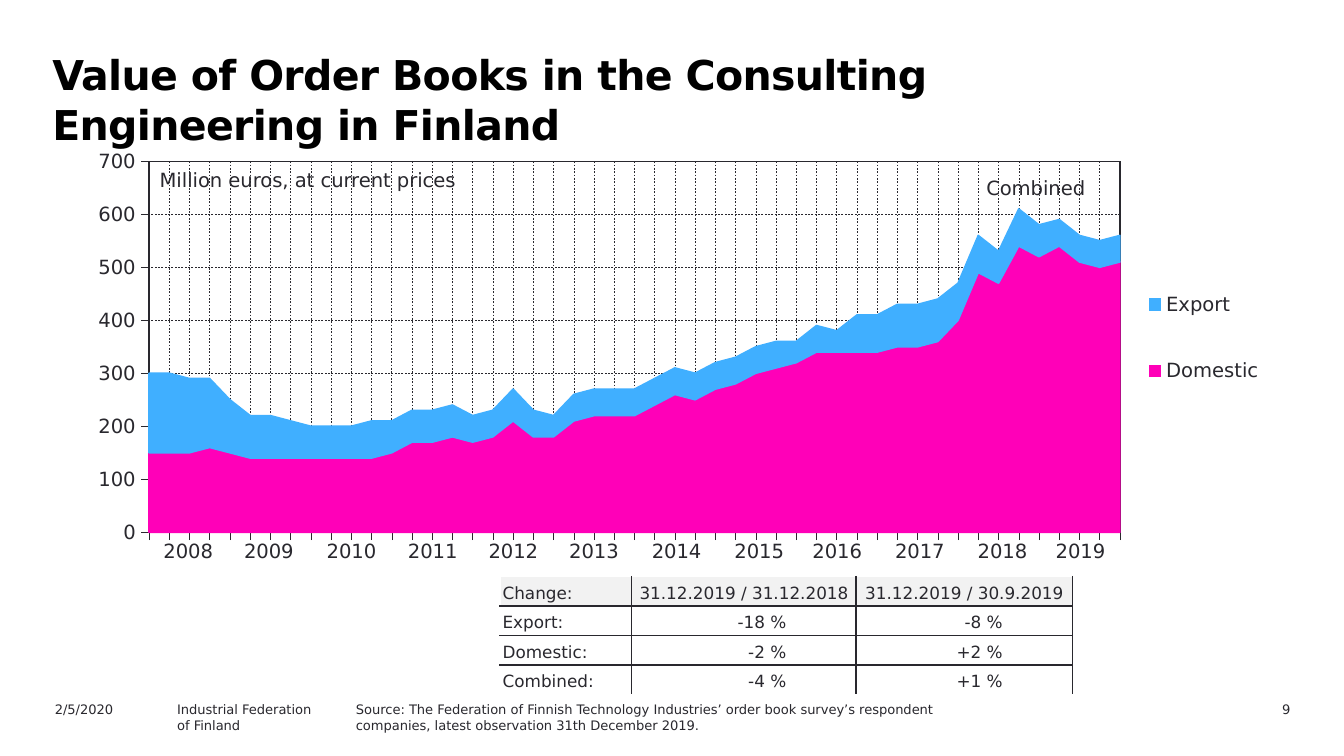
"""Build the slide on order books in Finnish consulting engineering."""
from dataclasses import dataclass

from lxml import etree
from pptx import Presentation
from pptx.chart.data import CategoryChartData
from pptx.dml.color import RGBColor
from pptx.enum.chart import XL_CHART_TYPE, XL_LEGEND_POSITION, XL_TICK_LABEL_POSITION, XL_TICK_MARK
from pptx.enum.dml import MSO_LINE
from pptx.enum.text import MSO_ANCHOR, PP_ALIGN
from pptx.oxml import parse_xml
from pptx.oxml.ns import nsdecls, qn
from pptx.util import Inches, Pt

AREA = XL_CHART_TYPE.AREA_STACKED
SIDE = XL_LEGEND_POSITION.RIGHT
BARE = XL_TICK_LABEL_POSITION.NONE
OUT = XL_TICK_MARK.OUTSIDE
DASH = MSO_LINE.DASH
LEFT, MID, RIGHT = PP_ALIGN.LEFT, PP_ALIGN.CENTER, PP_ALIGN.RIGHT
TOP, BASE = MSO_ANCHOR.TOP, MSO_ANCHOR.BOTTOM


@dataclass(frozen=True)
class Theme:
    face: str = "DejaVu Sans"
    ink: str = "29282E"
    black: str = "000000"
    white: str = "FFFFFF"
    head: str = "F2F2F2"
    pink: str = "FF00B8"
    blue: str = "40AFFF"
    title: float = 22
    label: float = 10.5
    cell: float = 9
    small: float = 7


theme = Theme()


def write(frame, lines, size, align=LEFT, color=theme.ink, bold=False):
    frame.word_wrap = True
    for i, line in enumerate(lines):
        par = frame.add_paragraph() if i else frame.paragraphs[0]
        par.alignment = align
        run = par.add_run()
        run.text = line
        run.font.name = theme.face
        run.font.size = Pt(size)
        run.font.bold = bold
        run.font.color.rgb = RGBColor.from_string(color)
    return par


def edge(cell, colors):
    props = cell._tc.get_or_add_tcPr()
    for side, color in zip("LRTB", colors):
        line = etree.SubElement(props, qn(f"a:ln{side}"), w=str(Pt(1)))
        if color:
            fill = etree.SubElement(line, qn("a:solidFill"))
            etree.SubElement(fill, qn("a:srgbClr"), val=color)
        else:
            etree.SubElement(line, qn("a:noFill"))


deck = Presentation()
deck.slide_width = Inches(10)
deck.slide_height = deck.slide_width * 9 // 16
slide = deck.slides.add_slide(deck.slide_layouts[6])
shapes = slide.shapes

box = shapes.add_textbox(Inches(0.28), Inches(0.31), Inches(8.74), Inches(0.77))
box.text_frame.margin_left = Inches(0.11)
par = write(box.text_frame, ["Value of Order Books in the Consulting Engineering in Finland"],
            theme.title, color=theme.black, bold=True)
par.line_spacing = Pt(27)
par.runs[0].font._element.set("spc", "-34")

home = [150, 150, 150, 160, 150, 140, 140, 140, 140, 140, 140, 140, 150, 170, 170, 180, 170,
        180, 210, 180, 180, 210, 220, 220, 220, 240, 260, 250, 270, 280, 300, 310, 320, 340,
        340, 340, 340, 350, 350, 360, 400, 490, 470, 540, 520, 540, 510, 500, 510]
abroad = [150, 150, 140, 130, 100, 80, 80, 70, 60, 60, 60, 70, 60, 60, 60, 60, 50, 50, 60, 50,
          40, 50, 50, 50, 50, 50, 50, 50, 50, 50, 50, 50, 40, 50, 40, 70, 70, 80, 80, 80, 70,
          70, 60, 70, 60, 50, 50, 50, 50]
data = CategoryChartData(number_format="#,##0")
data.categories = [str(n) for n in range(1, 47)]
data.add_series("Domestic", home)
data.add_series("Export", abroad)
chart = shapes.add_chart(AREA, Inches(0.42), Inches(1.11), Inches(9.18), Inches(3.12), data).chart
chart.has_title = False
chart.font.name = theme.face
chart.font.size = Pt(theme.label)
chart.font.color.rgb = RGBColor.from_string(theme.ink)
chart.plots[0].vary_by_categories = False
for series, color in zip(chart.plots[0].series, (theme.pink, theme.blue)):
    series.format.fill.solid()
    series.format.fill.fore_color.rgb = RGBColor.from_string(color)
    series.format.line.color.rgb = RGBColor.from_string(color)
    series.format.line.width = Pt(0.88)

for axis in (chart.category_axis, chart.value_axis):
    axis.has_major_gridlines = True
    axis.major_tick_mark = OUT
    grid = axis.major_gridlines.format.line
    for line, width in ((axis.format.line, 0.22), (grid, 0.25)):
        line.color.rgb = RGBColor.from_string(theme.ink)
        line.width = Pt(width)
    grid.dash_style = DASH
chart.category_axis.tick_label_position = BARE
chart.value_axis.minimum_scale = 0
chart.value_axis.maximum_scale = 700
chart.value_axis.major_unit = 100
chart.value_axis.tick_labels.number_format = "#,##0"
chart.value_axis.tick_labels.number_format_is_linked = False

chart.has_legend = True
chart.legend.position = SIDE
chart.legend.include_in_layout = False
plot = chart._chartSpace.chart.plotArea
legend = chart.legend._element
for host, spot, inner, area in ((plot, 0, True, (0.075, 0.029, 0.787, 0.885)),
                                (legend, 1, False, (0.87, 0.24, 0.12, 0.42))):
    for old in host.findall(qn("c:layout")):
        host.remove(old)
    layout = etree.Element(qn("c:layout"))
    manual = etree.SubElement(layout, qn("c:manualLayout"))
    if inner:
        etree.SubElement(manual, qn("c:layoutTarget"), val="inner")
    for mode in ("xMode", "yMode"):
        etree.SubElement(manual, qn(f"c:{mode}"), val="edge")
    for name, value in zip("xywh", area):
        etree.SubElement(manual, qn(f"c:{name}"), val=str(value))
    host.insert(spot, layout)
plot.append(parse_xml(
    f'<c:spPr {nsdecls("c", "a")}><a:noFill/><a:ln w="{Pt(0.88)}"><a:solidFill>'
    f'<a:srgbClr val="{theme.ink}"/></a:solidFill></a:ln></c:spPr>'))

rows = [("Change:", "31.12.2019 / 31.12.2018", "31.12.2019 / 30.9.2019"),
        ("Export:", "-18 %", "-8 %"),
        ("Domestic:", "-2 %", "+2 %"),
        ("Combined:", "-4 %", "+1 %")]
years = [[str(year) for year in range(2008, 2020)]]
spans = [0.6, 0.6, 0.63, 0.58, 0.62, 0.58, 0.65, 0.58, 0.58, 0.65, 0.58, 0.58]
for kind, left, top, high, grid, wide in (("change", 3.72, 4.29, 0.22, rows, [0.98, 1.67, 1.61]),
                                          ("years", 1.1, 3.97, 0.32, years, spans)):
    table = shapes.add_table(len(grid), len(wide), Inches(left), Inches(top),
                             Inches(sum(wide)), Inches(high * len(grid))).table
    table.first_row = table.horz_banding = False
    for col, width in zip(table.columns, wide):
        col.width = Inches(width)
    for r, words in enumerate(grid):
        table.rows[r].height = Inches(high)
        for c, word in enumerate(words):
            cell = table.cell(r, c)
            if kind == "years":
                edge(cell, [None] * 4)
                cell.fill.background()
                cell.vertical_anchor = TOP
                write(cell.text_frame, [word], theme.label, MID)
                continue
            figure = r > 0 and c > 0
            edge(cell, [theme.ink if c else theme.white, theme.ink,
                        theme.ink if r else theme.white,
                        theme.ink if r < len(grid) - 1 else theme.white])
            cell.fill.solid()
            cell.fill.fore_color.rgb = RGBColor.from_string(theme.white if r else theme.head)
            cell.vertical_anchor = BASE
            cell.margin_left = cell.margin_top = cell.margin_bottom = Inches(0.02)
            cell.margin_right = Inches(0.52 if figure else 0.02)
            write(cell.text_frame, [word], theme.cell, RIGHT if figure else MID if c else LEFT)

source = ("Source: The Federation of Finnish Technology Industries’ order book survey’s "
          "respondent companies, latest observation 31th December 2019.")
for left, top, width, high, lines, size, align in (
        (1.09, 1.2, 2.44, 0.27, ["Million euros, at current prices"], theme.label, LEFT),
        (7.24, 1.26, 1.06, 0.27, ["Combined"], theme.label, LEFT),
        (0.31, 5.17, 1, 0.18, ["2/5/2020"], theme.small, LEFT),
        (1.22, 5.17, 1.8, 0.18, ["Industrial Federation", "of Finland"], theme.small, LEFT),
        (2.55, 5.17, 5, 0.26, [source], theme.small, LEFT),
        (8.76, 5.17, 0.94, 0.18, ["9"], theme.small, RIGHT)):
    box = shapes.add_textbox(Inches(left), Inches(top), Inches(width), Inches(high))
    write(box.text_frame, lines, size, align)

deck.save("out.pptx")
